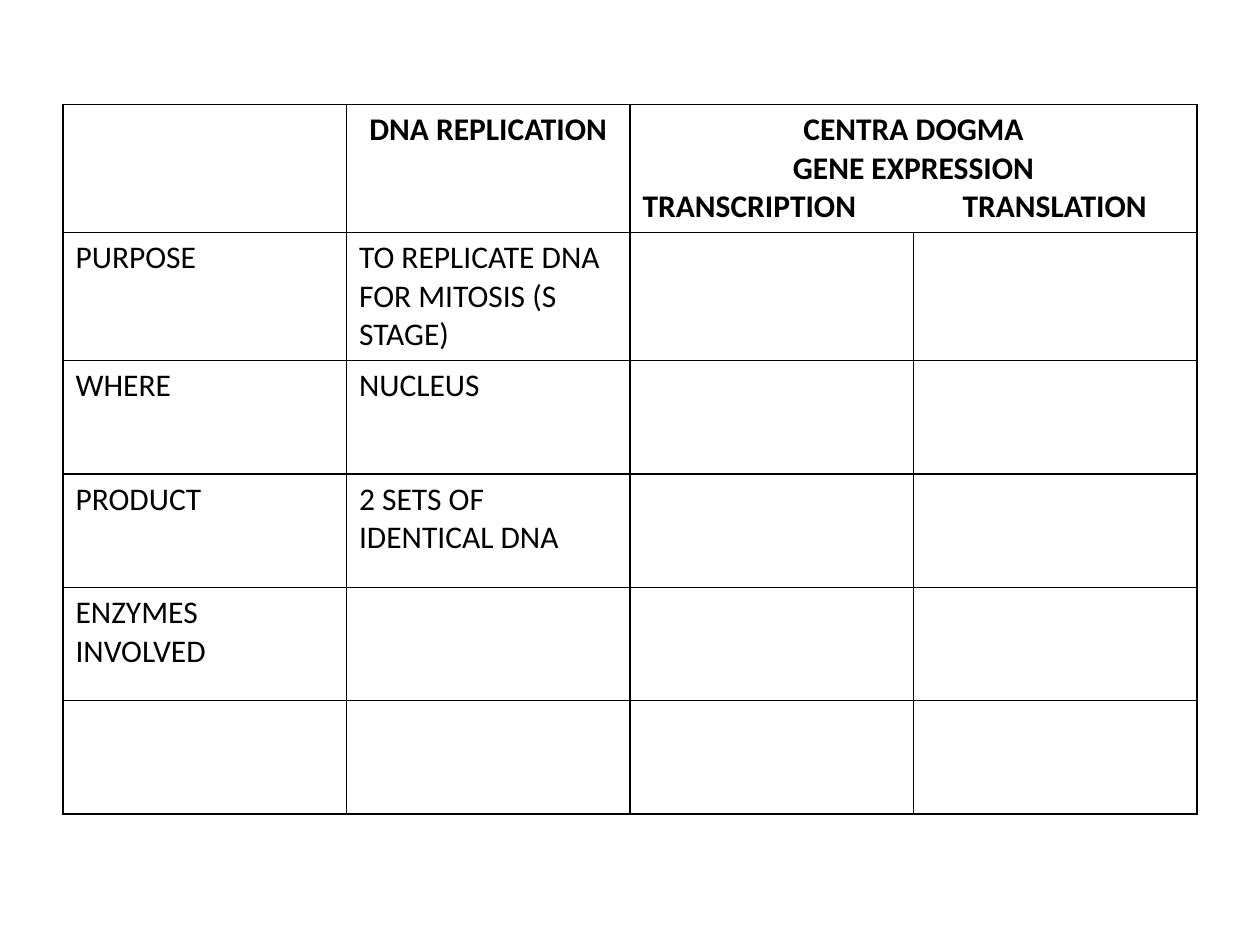
"""Build a worksheet slide comparing DNA replication with gene expression."""
from dataclasses import dataclass

from lxml import etree
from pptx import Presentation
from pptx.dml.color import RGBColor
from pptx.enum.text import PP_ALIGN
from pptx.oxml.ns import qn
from pptx.table import Table, _Cell
from pptx.util import Inches, Pt

CENTER, LEFT = PP_ALIGN.CENTER, PP_ALIGN.LEFT
COLORS = {"ink": "000000"}
FONT_FORMAT = {"name": "Calibri", "size": Pt(18)}
PLAIN_STYLE = {"first_row": False, "horz_banding": False}
BORDER_SIDES = ("lnL", "lnR", "lnT", "lnB")
COLUMN_COUNT = 4
COLUMN_WIDTH, ROW_HEIGHT = Inches(2.25), Inches(0.9)
TRANSLATION_TAB = Inches(2.54)


@dataclass(frozen=True)
class Line:
    """One paragraph of a table cell."""

    text: str
    align: PP_ALIGN = LEFT
    bold: bool = False


@dataclass(frozen=True)
class Topic:
    """One comparison row, with the answer for DNA replication."""

    label: str
    replication: str


REPLICATION_HEADING = [Line("DNA REPLICATION", CENTER, True)]
EXPRESSION_HEADING = [
    Line("CENTRA DOGMA", CENTER, True),
    Line("GENE EXPRESSION", CENTER, True),
    Line("TRANSCRIPTION\tTRANSLATION", LEFT, True),
]
TOPICS = [
    Topic("PURPOSE", "TO REPLICATE DNA FOR MITOSIS (S STAGE)"),
    Topic("WHERE", "NUCLEUS"),
    Topic("PRODUCT", "2 SETS OF IDENTICAL DNA"),
    Topic("ENZYMES INVOLVED", ""),
    Topic("", ""),
]


def set_attributes(target: object, values: dict) -> None:
    """Set each named value on the target."""
    for name, value in values.items():
        setattr(target, name, value)


def outline_cell(cell: _Cell) -> None:
    """Clear the fill and draw a thin border on every side."""
    cell.fill.background()
    properties = cell._tc.get_or_add_tcPr()
    for position, side in enumerate(BORDER_SIDES):
        border = etree.Element(qn(f"a:{side}"), w=str(Pt(1)))
        fill = etree.SubElement(border, qn("a:solidFill"))
        etree.SubElement(fill, qn("a:srgbClr"), val=COLORS["ink"])
        properties.insert(position, border)


def write_cell(cell: _Cell, lines: list[Line]) -> None:
    """Write the lines as paragraphs, with a tab stop where one is used."""
    for number, line in enumerate(lines):
        frame = cell.text_frame
        paragraph = frame.add_paragraph() if number else frame.paragraphs[0]
        paragraph.alignment = line.align
        set_attributes(paragraph.font, FONT_FORMAT)
        if not line.text:
            continue
        run = paragraph.add_run()
        run.text = line.text
        set_attributes(run.font, {**FONT_FORMAT, "bold": line.bold})
        run.font.color.rgb = RGBColor.from_string(COLORS["ink"])
        if "\t" in line.text:
            properties = paragraph._p.get_or_add_pPr()
            stops = etree.Element(qn("a:tabLst"))
            etree.SubElement(stops, qn("a:tab"), pos=str(TRANSLATION_TAB), algn="l")
            properties.insert(0, stops)


def fill_comparison(comparison: Table) -> None:
    """Format the grid, then write its headings and topics."""
    set_attributes(comparison, PLAIN_STYLE)
    for column in comparison.columns:
        column.width = COLUMN_WIDTH
    for cell in comparison.iter_cells():
        outline_cell(cell)
    comparison.cell(0, 2).merge(comparison.cell(0, 3))
    write_cell(comparison.cell(0, 1), REPLICATION_HEADING)
    write_cell(comparison.cell(0, 2), EXPRESSION_HEADING)
    for row, topic in enumerate(TOPICS, start=1):
        write_cell(comparison.cell(row, 0), [Line(topic.label)])
        write_cell(comparison.cell(row, 1), [Line(topic.replication)])


def main() -> None:
    """Create and save the presentation."""
    presentation = Presentation()
    set_attributes(
        presentation, {"slide_width": Inches(10), "slide_height": Inches(7.5)}
    )
    slide = presentation.slides.add_slide(presentation.slide_layouts[6])
    row_count = len(TOPICS) + 1
    comparison = slide.shapes.add_table(
        row_count, COLUMN_COUNT, Inches(0.5), Inches(0.83),
        COLUMN_WIDTH * COLUMN_COUNT, ROW_HEIGHT * row_count,
    ).table
    fill_comparison(comparison)
    presentation.save("out.pptx")


if __name__ == "__main__":
    main()
